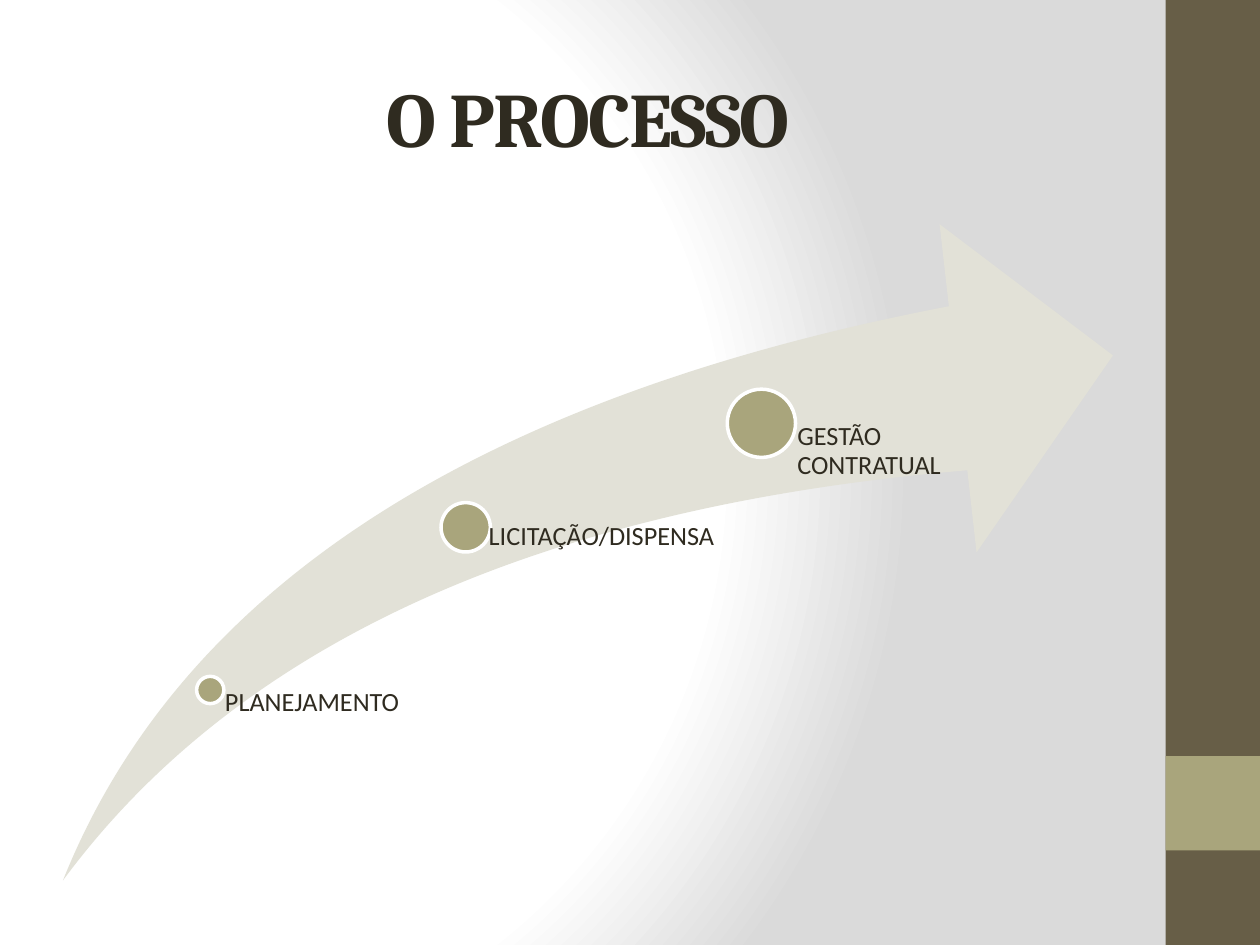
from collections import namedtuple
from dataclasses import dataclass

from lxml.etree import SubElement
from pptx import Presentation
from pptx.dml.color import RGBColor
from pptx.enum.shapes import MSO_SHAPE
from pptx.enum.text import MSO_ANCHOR, PP_ALIGN
from pptx.oxml.ns import qn
from pptx.util import Inches, Pt

Box = namedtuple("Box", "left top width height")


@dataclass(frozen=True)
class Theme:
    ink: str = "2F2B20"
    bar: str = "675E47"
    mark: str = "A9A57C"
    swoosh: str = "E2E1D7"
    white: str = "FFFFFF"
    grey: str = "DADADA"
    head: str = "Cambria"
    body: str = "Calibri"
    large: int = 44
    small: int = 15


THEME = Theme()

STEPS = [
    ("PLANEJAMENTO", (12.73, 68.9, 2.6), (14.05, 70.8, 23.3)),
    ("LICITAÇÃO/DISPENSA", (36, 42.42, 4.7), (38.06, 45.5, 24)),
    ("GESTÃO CONTRATUAL", (63.27, 25.14, 6.5), (66.5, 30.33, 24)),
]


def part(box, left, top, width, height):
    return Box(
        int(box.left + box.width * left / 100),
        int(box.top + box.height * top / 100),
        int(box.width * width / 100),
        int(box.height * height / 100),
    )


def apply(item, values):
    for name, value in values.items():
        setattr(item, name, value)


def paint(fill, color):
    fill.solid()
    fill.fore_color.rgb = RGBColor.from_string(color)


def shape(shapes, kind, box, color, edge=None):
    item = shapes.add_shape(kind, *box)
    item.shadow.inherit = False
    paint(item.fill, color)
    if edge:
        paint(item.line.fill, edge)
        item.line.width = Pt(2)
    else:
        item.line.fill.background()
    return item


def write(frame, text, color, font, looks):
    para = frame.paragraphs[0]
    run = para.add_run()
    run.text = text
    apply(run.font, font)
    run.font.color.rgb = RGBColor.from_string(color)
    apply(para, looks)
    return run


def backdrop(slide):
    slide.background.fill.gradient()
    grad = next(slide.element.iter(qn("a:gradFill")))
    for child in list(grad):
        grad.remove(child)
    stops = SubElement(grad, qn("a:gsLst"))
    for place, color in ((0, THEME.white), (75, THEME.white), (100, THEME.grey)):
        stop = SubElement(stops, qn("a:gs"), pos=str(place * 1000))
        SubElement(stop, qn("a:srgbClr"), val=color)
    round_off = SubElement(grad, qn("a:path"), path="circle")
    SubElement(round_off, qn("a:fillToRect"), l="20000", t="50000", r="100000", b="50000")


def sidebar(slide, box):
    shape(slide.shapes, MSO_SHAPE.RECTANGLE, box, THEME.bar)
    shape(slide.shapes, MSO_SHAPE.RECTANGLE, part(box, 0, 80, 100, 10), THEME.mark)


def heading(slide, box, text):
    title = slide.shapes.title
    apply(title, box._asdict())
    apply(title.text_frame, {"vertical_anchor": MSO_ANCHOR.MIDDLE, "word_wrap": True})
    font = {"name": THEME.head, "size": Pt(THEME.large), "bold": True}
    run = write(title.text_frame, text, THEME.ink, font, {"alignment": PP_ALIGN.CENTER})
    run.font._element.set("spc", "-100")


def label(shapes, box, text, inset):
    frame = shapes.add_textbox(*box).text_frame
    apply(frame, {
        "word_wrap": True,
        "vertical_anchor": MSO_ANCHOR.TOP,
        "margin_left": inset,
        "margin_top": 0,
        "margin_right": 0,
        "margin_bottom": 0,
    })
    font = {"name": THEME.body, "size": Pt(THEME.small)}
    write(frame, text, THEME.ink, font, {"line_spacing": 0.9, "alignment": PP_ALIGN.LEFT})


def process(slide, box, steps):
    shapes = slide.shapes.add_group_shape().shapes
    arrow = shape(shapes, MSO_SHAPE.SWOOSH_ARROW, box, THEME.swoosh)
    for index in range(2):
        arrow.adjustments[index] = 0.25
    for text, (left, top, size), (start, drop, span) in steps:
        dot = part(box, left, top, size, 0)
        dot = dot._replace(height=dot.width)
        shape(shapes, MSO_SHAPE.OVAL, dot, THEME.mark, THEME.white)
        label(shapes, part(box, start, drop, span, 100 - drop), text, int(dot.width * 0.53))


def main():
    deck = Presentation()
    apply(deck, {"slide_width": Inches(10), "slide_height": Inches(7.5)})
    slide = deck.slides.add_slide(deck.slide_layouts[5])
    page = Box(0, 0, deck.slide_width, deck.slide_height)
    backdrop(slide)
    sidebar(slide, part(page, 92.5, 0, 7.5, 100))
    heading(slide, part(page, 5, 4, 83.33, 16.67), "O PROCESSO")
    process(slide, part(page, 5, 23.73, 83.33, 69.44), STEPS)
    deck.save("out.pptx")


if __name__ == "__main__":
    main()
